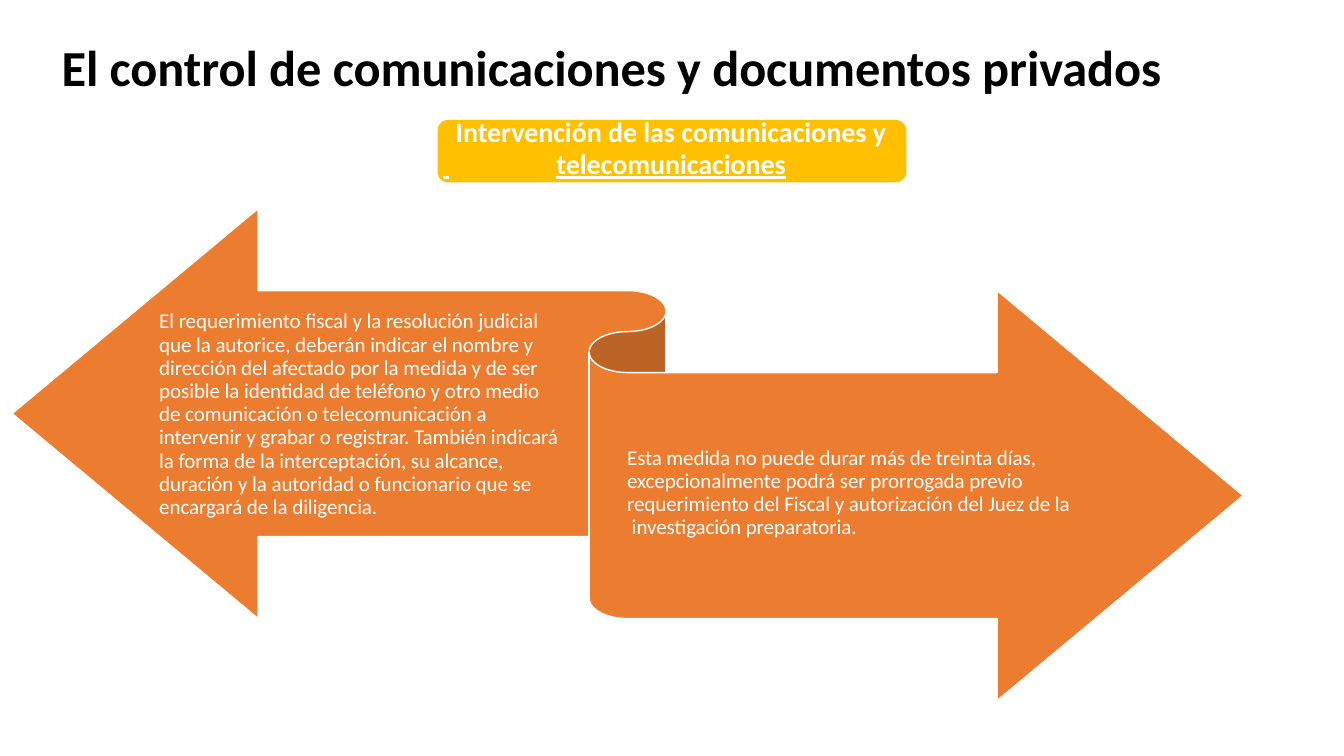
import dataclasses

import pptx
import pptx.dml.color
import pptx.enum.shapes
import pptx.enum.text
import pptx.oxml
import pptx.oxml.ns
import pptx.util

SLIDE_WIDTH = pptx.util.Inches(13.33)
SLIDE_HEIGHT = pptx.util.Inches(7.5)
FONT = "Calibri"
WHITE = "FFFFFF"
BLACK = "000000"
AMBER = "FFC000"
ORANGE = "EC7C30"


@dataclasses.dataclass(frozen=True)
class Area:
    left: float
    top: float
    width: float
    height: float

    def lengths(self) -> tuple[int, int, int, int]:
        return (
            round(SLIDE_WIDTH * self.left / 100),
            round(SLIDE_HEIGHT * self.top / 100),
            round(SLIDE_WIDTH * self.width / 100),
            round(SLIDE_HEIGHT * self.height / 100),
        )


@dataclasses.dataclass(frozen=True)
class Caption:
    area: Area
    text: str
    size: float
    color: str = WHITE
    bold: bool = False
    line_spacing: float | pptx.util.Length = 1.0
    space_before: float = 0


@dataclasses.dataclass(frozen=True)
class Panel:
    area: Area
    kind: pptx.enum.shapes.MSO_SHAPE
    fill: str
    outline: str | None = None
    adjustments: tuple[float, ...] = ()


PANELS = (
    Panel(Area(32.56, 15.87, 34.88, 8.27),
          pptx.enum.shapes.MSO_SHAPE.ROUNDED_RECTANGLE, AMBER, adjustments=(0.17,)),
    Panel(Area(0.9, 27.6, 91.6, 65.07),
          pptx.enum.shapes.MSO_SHAPE.LEFT_RIGHT_RIBBON, ORANGE, WHITE),
)

TITLE = Caption(
    Area(4.58, 4.8, 82.4, 8.4),
    "El control de comunicaciones y documentos privados",
    36, BLACK, bold=True, space_before=1,
)
SUBTITLE = Caption(
    Area(32.93, 15.33, 34.13, 8.93),
    "Intervención de las comunicaciones y\n \ttelecomunicaciones",
    20, bold=True, line_spacing=pptx.util.Pt(23.1), space_before=1.1,
)
ARROW_TEXTS = (
    Caption(
        Area(11.85, 41.07, 30.16, 27.6),
        "El requerimiento fiscal y la resolución judicial\v"
        "que la autorice, deberán indicar el nombre y\v"
        "dirección del afectado por la medida y de ser\v"
        "posible la identidad de teléfono y otro medio\v"
        "de comunicación o telecomunicación a\v"
        "intervenir y grabar o registrar. También indicará\v"
        "la forma de la interceptación, su alcance,\v"
        "duración y la autoridad o funcionario que se\v"
        "encargará de la diligencia.",
        15, line_spacing=0.92, space_before=2.5,
    ),
    Caption(
        Area(46.66, 59.07, 33.46, 12.4),
        "Esta medida no puede durar más de treinta días,\v"
        "excepcionalmente podrá ser prorrogada previo\v"
        "requerimiento del Fiscal y autorización del Juez de la\v"
        " investigación preparatoria.",
        15, line_spacing=0.92, space_before=2.5,
    ),
)


def rgb(color: str) -> pptx.dml.color.RGBColor:
    return pptx.dml.color.RGBColor.from_string(color)


def draw_panel(page, panel: Panel) -> None:
    shape = page.shapes.add_shape(panel.kind, *panel.area.lengths())
    shape.shadow.inherit = False
    for index, value in enumerate(panel.adjustments):
        shape.adjustments[index] = value
    shape.fill.solid()
    shape.fill.fore_color.rgb = rgb(panel.fill)
    if panel.outline is None:
        shape.line.fill.background()
    else:
        shape.line.color.rgb = rgb(panel.outline)
        shape.line.width = pptx.util.Pt(1)


def draw_caption(page, caption: Caption):
    box = page.shapes.add_textbox(*caption.area.lengths())
    frame = box.text_frame
    frame.word_wrap = True
    frame.vertical_anchor = pptx.enum.text.MSO_ANCHOR.TOP
    frame.margin_left = frame.margin_right = 0
    frame.margin_top = frame.margin_bottom = 0
    frame.text = caption.text
    frame.paragraphs[0].space_before = pptx.util.Pt(caption.space_before)
    for para in frame.paragraphs:
        para.line_spacing = caption.line_spacing
        for span in para.runs:
            span.font.name = FONT
            span.font.size = pptx.util.Pt(caption.size)
            span.font.bold = caption.bold
            span.font.color.rgb = rgb(caption.color)
            span.font._element.set("spc", "-5")
    return frame


def add_tab_stop(para, position: int) -> None:
    properties = para._p.get_or_add_pPr()
    stops = pptx.oxml.parse_xml(
        f'<a:tabLst {pptx.oxml.ns.nsdecls("a")}><a:tab pos="{position}" algn="l"/></a:tabLst>'
    )
    properties.append(stops)


def draw_subtitle(page) -> None:
    first, second = draw_caption(page, SUBTITLE).paragraphs
    first._p.get_or_add_pPr().set("marL", str(pptx.util.Inches(0.13)))
    add_tab_stop(second, pptx.util.Inches(1.13))
    for span in second.runs:
        span.font.underline = True


def main() -> None:
    deck = pptx.Presentation()
    deck.slide_width = SLIDE_WIDTH
    deck.slide_height = SLIDE_HEIGHT
    page = deck.slides.add_slide(deck.slide_layouts[6])
    for panel in PANELS:
        draw_panel(page, panel)
    draw_caption(page, TITLE)
    draw_subtitle(page)
    for caption in ARROW_TEXTS:
        draw_caption(page, caption)
    deck.save("out.pptx")


if __name__ == "__main__":
    main()
